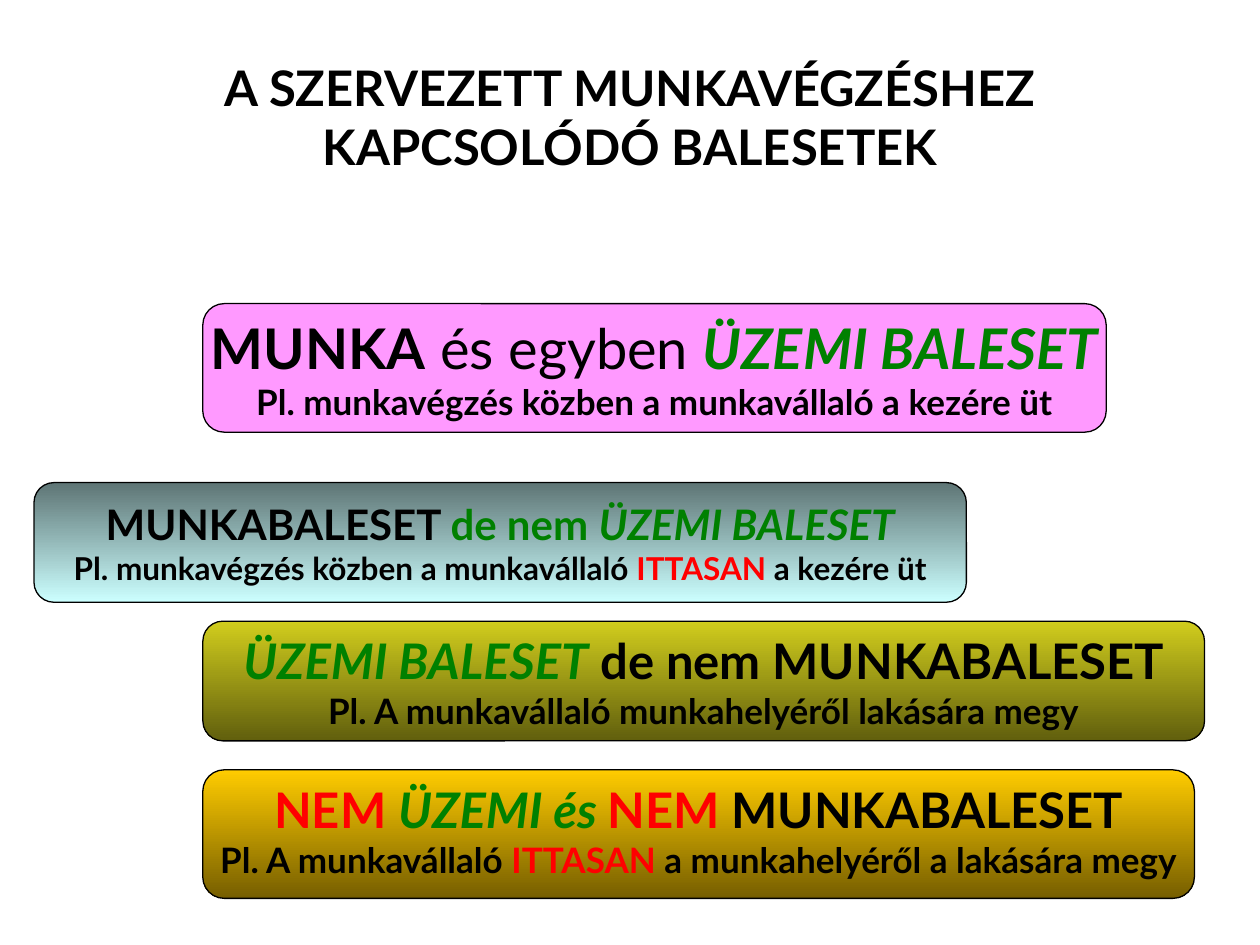
from pptx import Presentation
from pptx.dml.color import RGBColor
from pptx.enum.shapes import MSO_SHAPE
from pptx.enum.text import MSO_ANCHOR, PP_ALIGN
from pptx.util import Inches, Pt

THEME = {
    "font": "Lato",
    "ink": "000000", "works": "008000", "alert": "FF0000",
    "title": 28, "outline": 0.75,
    "pink": ["FF99FF"], "aqua": ["5E7575", "CCFFFF"],
    "olive": ["D1CD1D", "615F0D"], "gold": ["FFCC00", "765E00"],
}
ALTERNATE, ROUNDED = MSO_SHAPE.FLOWCHART_ALTERNATE_PROCESS, MSO_SHAPE.ROUNDED_RECTANGLE

TITLE = "A SZERVEZETT MUNKAVÉGZÉSHEZ KAPCSOLÓDÓ BALESETEK"
INDENT = 1.61
ACCIDENTS = [
    {"outline": ALTERNATE, "at": (INDENT, 2.41, 7.17, 1.02), "fill": "pink", "lines": [
        (32, [("MUNKA", "ink", "b"), (" és egyben ", "ink", ""), ("ÜZEMI BALESET", "works", "bi")]),
        (20, [("Pl. munkavégzés közben a munkavállaló a kezére üt", "ink", "b")])]},
    {"outline": ALTERNATE, "at": (0.27, 3.83, 7.4, 0.95), "fill": "aqua", "lines": [
        (24, [("MUNKABALESET ", "ink", "b"), ("de nem ", "works", "b"), ("ÜZEMI BALESET", "works", "bi")]),
        (18, [("Pl. munkavégzés közben a munkavállaló ", "ink", "b"), ("ITTASAN ", "alert", "b"),
              ("a kezére üt", "ink", "b")])]},
    {"outline": ROUNDED, "at": (INDENT, 4.93, 7.95, 0.95), "fill": "olive", "lines": [
        (28, [("ÜZEMI BALESET", "works", "bi"), (" de nem MUNKABALESET", "ink", "b")]),
        (20, [("Pl. A munkavállaló munkahelyéről lakására megy", "ink", "b")])]},
    {"outline": ROUNDED, "at": (INDENT, 6.11, 7.87, 1.02), "fill": "gold", "bottom": 0.12, "lines": [
        (28, [("NEM ", "alert", "b"), ("ÜZEMI és ", "works", "bi"), ("NEM ", "alert", "b"),
              ("MUNKABALESET", "ink", "b")]),
        (20, [("Pl. A munkavállaló ", "ink", "b"), ("ITTASAN", "alert", "b"),
              (" a munkahelyéről a lakására megy", "ink", "b")])]},
]


def write(frame, lines, wrap, bottom=0.05):
    frame.word_wrap = wrap
    frame.vertical_anchor = MSO_ANCHOR.MIDDLE
    frame.margin_bottom = Inches(bottom)
    for index, (size, runs) in enumerate(lines):
        line = frame.add_paragraph() if index else frame.paragraphs[0]
        line.alignment = PP_ALIGN.CENTER
        for words, color, style in runs:
            run = line.add_run()
            run.text = words
            run.font.name = THEME["font"]
            run.font.size = Pt(size)
            run.font.bold = "b" in style
            run.font.italic = "i" in style
            run.font.color.rgb = RGBColor.from_string(THEME[color])


def paint(fill, colors):
    if len(colors) == 1:
        fill.solid()
        fill.fore_color.rgb = RGBColor.from_string(colors[0])
        return
    fill.gradient()
    fill.gradient_angle = 270
    for stop, color, position in zip(fill.gradient_stops, colors, (0, 1)):
        stop.color.rgb = RGBColor.from_string(color)
        stop.position = position


def add_accident(slide, accident):
    panel = slide.shapes.add_shape(accident["outline"], *map(Inches, accident["at"]))
    panel.shadow.inherit = False
    paint(panel.fill, THEME[accident["fill"]])
    panel.line.color.rgb = RGBColor.from_string(THEME["ink"])
    panel.line.width = Pt(THEME["outline"])
    write(panel.text_frame, accident["lines"], False, accident.get("bottom", 0.05))


def main():
    """Build the slide that sorts workplace accidents by legal class."""
    deck = Presentation()
    deck.slide_width, deck.slide_height = Inches(10), Inches(7.5)
    slide = deck.slides.add_slide(deck.slide_layouts[6])
    heading = slide.shapes.add_textbox(*map(Inches, (0.5, 0.3, 9, 1.25)))
    write(heading.text_frame, [(THEME["title"], [(TITLE, "ink", "b")])], True)
    for accident in ACCIDENTS:
        add_accident(slide, accident)
    deck.save("out.pptx")


if __name__ == "__main__":
    main()
